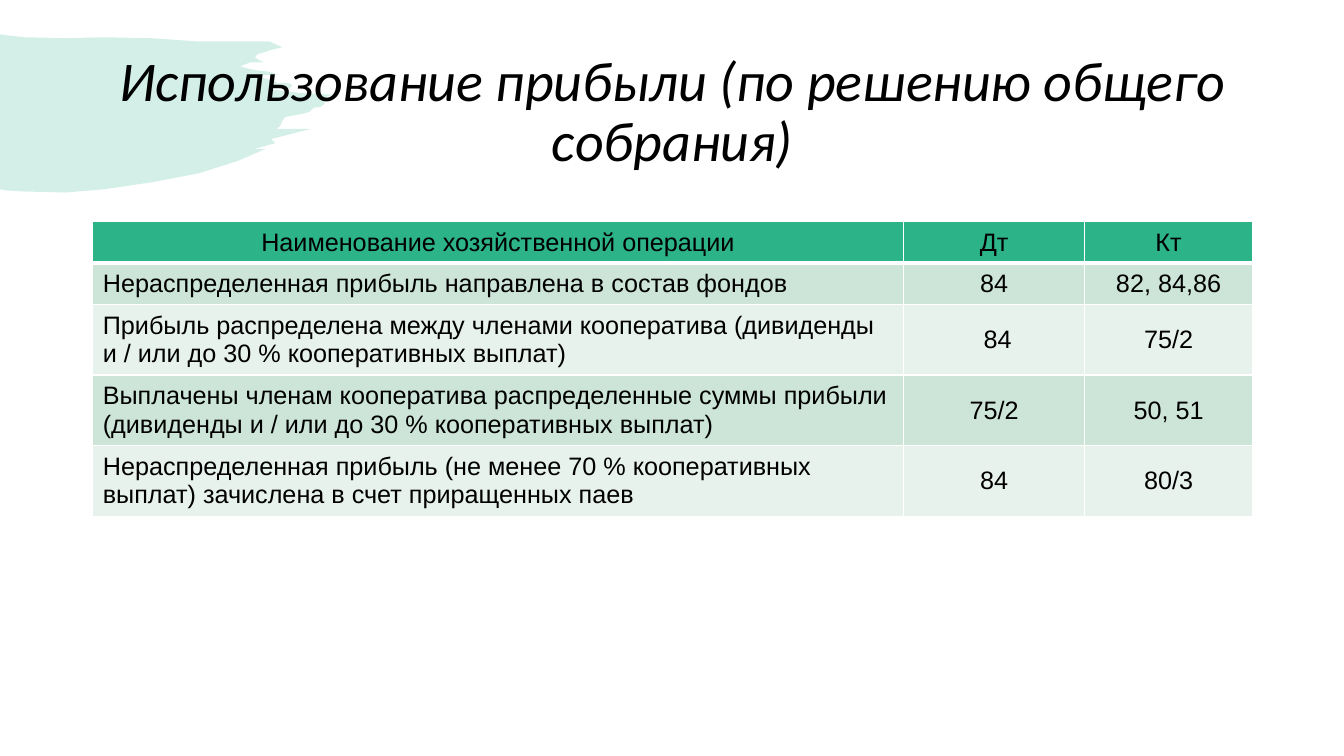
import pptx
import pptx.dml.color
import pptx.enum.text
import pptx.oxml
import pptx.oxml.ns
import pptx.util
from lxml import etree

SCALE = 9144  # EMU in one px, 100 px to the inch
GREEN, WHITE, BLACK = "2CB387", "FFFFFF", "000000"
BANDS = ["CDE5D9", "E8F2ED"]
COLS = [804, 180, 166]
HEIGHTS = [41, 41, 66, 66, 66]
ROWS = [
    ["Наименование хозяйственной операции", "Дт", "Кт"],
    ["Нераспределенная прибыль направлена в состав фондов", "84", "82, 84,86"],
    ["Прибыль распределена между членами кооператива (дивиденды и / или "
     "до 30 % кооперативных выплат)", " 84", "75/2"],
    ["Выплачены членам кооператива распределенные суммы прибыли "
     "(дивиденды и / или до 30 % кооперативных выплат)", "75/2", "50, 51"],
    ["Нераспределенная прибыль (не менее 70 % кооперативных выплат) "
     "зачислена в счет приращенных паев", "84", "80/3"],
]
BRUSH = [
    (0, 34), (6, 35), (25, 37), (66, 38), (102, 37), (151, 38), (194, 41),
    (248, 41), (267, 41), (280, 47), (271, 49), (255, 54), (253, 57),
    (256, 59), (262, 62), (248, 62), (238, 66), (246, 68), (256, 70),
    (266, 71), (275, 74), (251, 75), (263, 78), (273, 81), (276, 83),
    (280, 82), (288, 83), (290, 85), (287, 88), (284, 88), (263, 88),
    (295, 92), (330, 94), (321, 97), (322, 103), (318, 106), (311, 107),
    (307, 111), (300, 113), (283, 116), (280, 120), (278, 125), (274, 128),
    (308, 128), (269, 138), (273, 142), (252, 148), (263, 148), (235, 160),
    (197, 172), (150, 181), (102, 188), (65, 191), (23, 190), (7, 189),
    (0, 188),
]


def px(n):
    return pptx.util.Emu(n * SCALE)


def color(code):
    return pptx.dml.color.RGBColor.from_string(code)


def write(frame, text, size, font, align="CENTER", italic=False, space=1.0):
    frame.word_wrap = True
    frame.vertical_anchor = pptx.enum.text.MSO_ANCHOR.MIDDLE
    para = frame.paragraphs[0]
    para.alignment = getattr(pptx.enum.text.PP_ALIGN, align)
    para.line_spacing = space
    run = para.add_run()
    run.text = text
    run.font.size = pptx.util.Pt(size)
    run.font.name = font
    run.font.bold = False
    run.font.italic = italic
    run.font.color.rgb = color(BLACK)


def edge(cell, side, width):
    """Draw one white border; call before the cell is filled."""
    props = cell._tc.get_or_add_tcPr()
    line = etree.SubElement(props, pptx.oxml.ns.qn("a:ln" + side),
                            w=str(pptx.util.Pt(width)))
    fill = etree.SubElement(line, pptx.oxml.ns.qn("a:solidFill"))
    etree.SubElement(fill, pptx.oxml.ns.qn("a:srgbClr"), val=WHITE)


def add_brush(slide):
    pen = slide.shapes.build_freeform(*BRUSH[0], scale=SCALE)
    pen.add_line_segments(BRUSH[1:], close=True)
    brush = pen.convert_to_shape()
    brush.shadow.inherit = False
    brush.line.fill.background()
    brush.fill.solid()
    brush.fill.fore_color.rgb = color(GREEN)
    tint = brush._element.spPr.find(".//" + pptx.oxml.ns.qn("a:srgbClr"))
    etree.SubElement(tint, pptx.oxml.ns.qn("a:alpha"), val="20000")


def add_title(slide, text):
    box = slide.shapes.add_textbox(px(92), px(40), px(1150), px(145))
    write(box.text_frame, text, 40, "Calibri", italic=True, space=0.9)


def add_grid(slide):
    grid = slide.shapes.add_table(len(ROWS), len(COLS), px(92), px(220),
                                  px(sum(COLS)), px(sum(HEIGHTS))).table
    for col, width in zip(grid.columns, COLS):
        col.width = px(width)
    for r, (texts, height) in enumerate(zip(ROWS, HEIGHTS)):
        grid.rows[r].height = px(height)
        for c, text in enumerate(texts):
            cell = grid.cell(r, c)
            align = "LEFT" if r and not c else "CENTER"
            write(cell.text_frame, text, 18, "Arial", align=align)
            cell.vertical_anchor = pptx.enum.text.MSO_ANCHOR.MIDDLE
            for side in "LRTB":
                thick = (r, side) in [(0, "B"), (1, "T")]
                edge(cell, side, 3 if thick else 1)
            cell.fill.solid()
            cell.fill.fore_color.rgb = color(BANDS[(r - 1) % 2] if r else GREEN)


def main():
    deck = pptx.Presentation()
    deck.slide_width, deck.slide_height = px(1333), px(750)
    slide = deck.slides.add_slide(deck.slide_layouts[6])
    add_brush(slide)
    add_title(slide, "Использование прибыли (по решению общего собрания)")
    add_grid(slide)
    deck.save("out.pptx")


if __name__ == "__main__":
    main()
